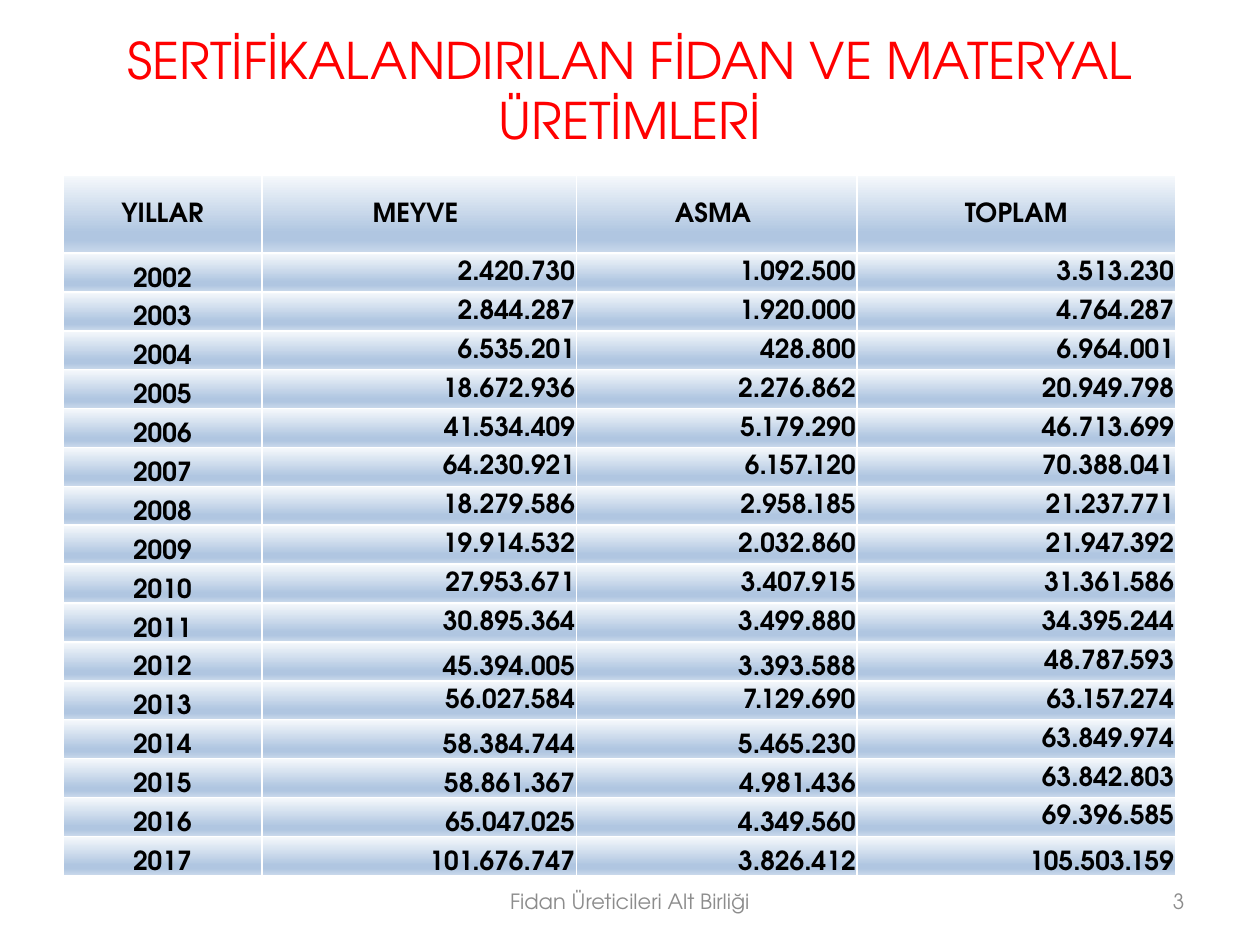
from lxml import etree
from pptx import Presentation
from pptx import util as u
from pptx.dml.color import RGBColor
from pptx.enum import text
from pptx.oxml import ns

COLORS = {"title": "FF0000", "body": "000000", "footer": "8C8C8C", "border": "FFFFFF"}
GRADIENT = [(0, "F6F9FC"), (74, "B0C6E1"), (83, "B0C6E1"), (100, "CAD9EB")]
CENTER, RIGHT = text.PP_ALIGN.CENTER, text.PP_ALIGN.RIGHT
MIDDLE, BOTTOM = text.MSO_ANCHOR.MIDDLE, text.MSO_ANCHOR.BOTTOM

HEADERS = ["YILLAR", "MEYVE ", "ASMA ", "TOPLAM"]
PRODUCTION = [
    ("2002", "2.420.730", "1.092.500", "3.513.230"),
    ("2003", "2.844.287", "1.920.000", "4.764.287"),
    ("2004", "6.535.201", "428.800", "6.964.001"),
    ("2005", "18.672.936", "2.276.862", "20.949.798"),
    ("2006", "41.534.409", "5.179.290", "46.713.699"),
    ("2007", "64.230.921", "6.157.120", "70.388.041"),
    ("2008", "18.279.586", "2.958.185", "21.237.771"),
    ("2009", "19.914.532", "2.032.860", "21.947.392"),
    ("2010", "27.953.671", "3.407.915", "31.361.586"),
    ("2011", "30.895.364", "3.499.880", "34.395.244"),
    ("2012", "45.394.005", "3.393.588", "48.787.593"),
    ("2013", "56.027.584", "7.129.690", "63.157.274"),
    ("2014", "58.384.744", "5.465.230", "63.849.974"),
    ("2015", "58.861.367", "4.981.436", "63.842.803"),
    ("2016", "65.047.025", "4.349.560", "69.396.585"),
    ("2017", "101.676.747", "3.826.412", "105.503.159"),
]
BOTTOM_YEARS = {"2012", "2014", "2015", "2016", "2017"}


def anchor_for(row, column):
    """Years sit at the bottom of their cell, as do the figures of some later years."""
    year = row[0]
    if year == HEADERS[0]:
        return MIDDLE
    low = column == 0 or year in BOTTOM_YEARS and (column < 3 or year == "2017")
    return BOTTOM if low else MIDDLE


class Deck:
    font = "TeX Gyre Adventor"

    def __init__(self, width, height):
        self.presentation = Presentation()
        self.presentation.slide_width = u.Inches(width)
        self.presentation.slide_height = u.Inches(height)
        self.slide = self.presentation.slides.add_slide(self.presentation.slide_layouts[6])

    def box(self, left, top, width, height):
        """Turn shares of the slide's size into lengths."""
        across, down = self.presentation.slide_width, self.presentation.slide_height
        return [round(share * size) for share, size in
                zip((left, top, width, height), (across, down, across, down))]

    def set_text(self, frame, words, color, size, align, bold=False, spacing=None):
        paragraph = frame.paragraphs[0]
        paragraph.alignment = align
        if spacing:
            paragraph.line_spacing = u.Pt(spacing)
        run = paragraph.add_run()
        run.text = words
        for name, value in {"name": self.font, "size": u.Pt(size), "bold": bold}.items():
            setattr(run.font, name, value)
        run.font.color.rgb = RGBColor.from_string(COLORS[color])

    def label(self, words, box, **style):
        frame = self.slide.shapes.add_textbox(*self.box(*box)).text_frame
        frame.word_wrap = True
        frame.vertical_anchor = MIDDLE
        self.set_text(frame, words, **style)

    def table(self, rows, box, shares):
        """Draw a table whose header is two grid rows high and the others one."""
        left, top, width, height = self.box(*box)
        table = self.slide.shapes.add_table(
            len(rows), len(shares), left, top, width, height).table
        for column, share in zip(table.columns, shares):
            column.width = round(width * share / sum(shares))
        for index, row in enumerate(rows):
            table.rows[index].height = height * (1 if index else 2) // (len(rows) + 1)
            for column, words in enumerate(row):
                cell = table.cell(index, column)
                self.style_cell(cell, anchor_for(row, column))
                align = RIGHT if index and column else CENTER
                self.set_text(cell.text_frame, words, "body", 15, align, True, spacing=14)

    def style_cell(self, cell, anchor):
        margins = {f"margin_{side}": u.Inches(0.01) for side in ("left", "top", "right")}
        for name, value in {**margins, "margin_bottom": 0, "vertical_anchor": anchor}.items():
            setattr(cell, name, value)
        properties = cell._tc.get_or_add_tcPr()
        for side in "LRTB":
            line = etree.SubElement(properties, ns.qn(f"a:ln{side}"), w=str(u.Pt(1)))
            fill = etree.SubElement(line, ns.qn("a:solidFill"))
            etree.SubElement(fill, ns.qn("a:srgbClr"), val=COLORS["border"])
        gradient = etree.SubElement(properties, ns.qn("a:gradFill"), rotWithShape="1")
        stops = etree.SubElement(gradient, ns.qn("a:gsLst"))
        for percent, color in GRADIENT:
            stop = etree.SubElement(stops, ns.qn("a:gs"), pos=str(percent * 1000))
            etree.SubElement(stop, ns.qn("a:srgbClr"), val=color)
        etree.SubElement(gradient, ns.qn("a:lin"), ang=str(90 * 60000), scaled="0")


def main():
    deck = Deck(10, 7.5)
    deck.label("SERTİFİKALANDIRILAN FİDAN VE MATERYAL ÜRETİMLERİ", (0.05, 0.04, 0.9, 0.11),
               color="title", size=28.8, align=CENTER, spacing=34.3)
    deck.table([HEADERS, *PRODUCTION], (0.05, 1.39 / 7.5, 8.83 / 10, 5.56 / 7.5),
               (1.58, 2.5, 2.23, 2.53))
    footer = {"color": "footer", "size": 12}
    footer_top, footer_height = 6.95 / 7.5, 0.4 / 7.5
    deck.label("Fidan Üreticileri Alt Birliği", (0.34, footer_top, 0.32, footer_height),
               align=CENTER, **footer)
    deck.label("3", (0.72, footer_top, 0.23, footer_height), align=RIGHT, **footer)
    deck.presentation.save("out.pptx")


if __name__ == "__main__":
    main()
